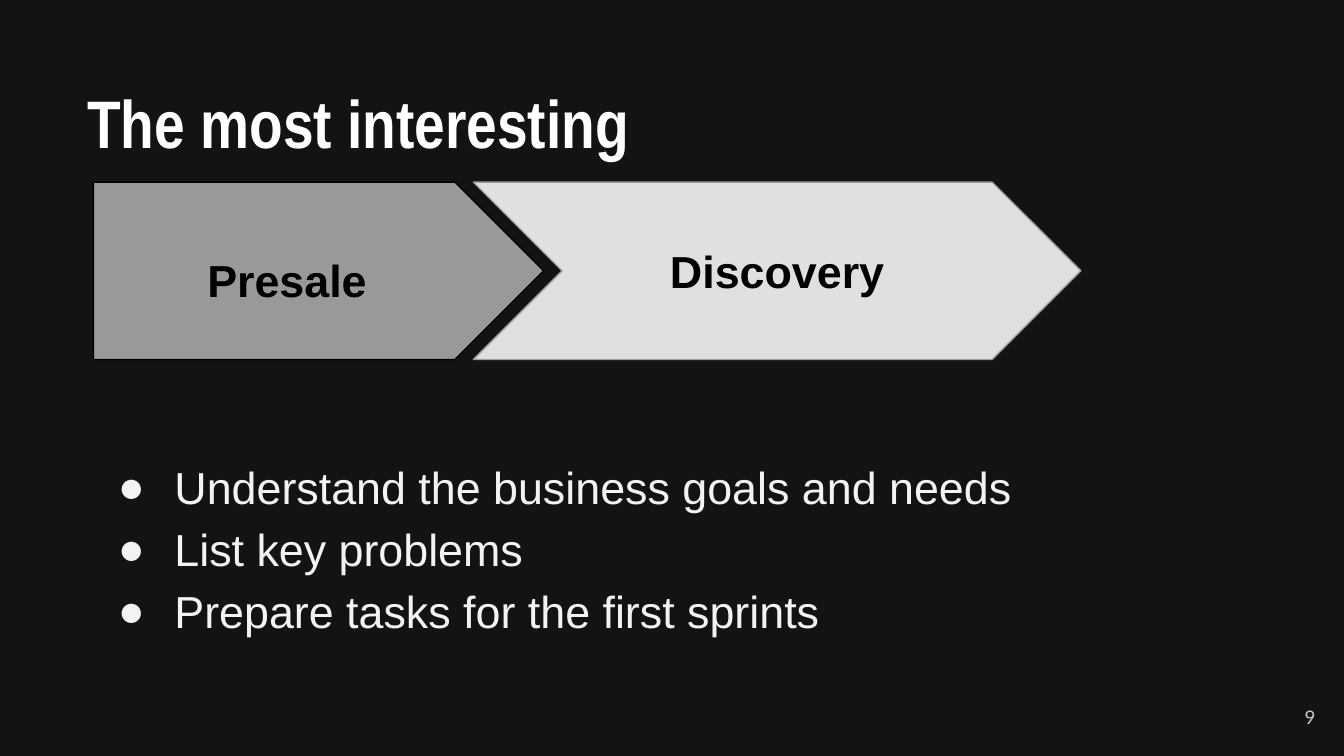
from dataclasses import dataclass

from lxml.etree import SubElement
from pptx import Presentation
from pptx.dml.color import RGBColor
from pptx.enum.shapes import MSO_SHAPE as Shape
from pptx.enum.text import MSO_ANCHOR as Anchor, MSO_AUTO_SIZE as AutoSize, PP_ALIGN as Align
from pptx.oxml.ns import qn
from pptx.util import Inches, Pt

TITLE_ONLY = 5
CELL = 0.1  # inches per grid column and row
COLUMNS = 100
ROWS = COLUMNS * 9 / 16


@dataclass(frozen=True)
class Theme:
    background: str = "131313"
    title: str = "FFFFFF"
    body: str = "F3F3F3"
    page_number: str = "CACACA"
    stage_text: str = "000000"
    title_font: str = "Arial Narrow"
    body_font: str = "Arial"
    number_font: str = "Lato"
    title_size: int = 36
    body_size: int = 24
    number_size: int = 10


def color(value):
    return RGBColor.from_string(value)


def cells(*counts):
    return [Inches(count * CELL) for count in counts]


class SlideBuilder:
    def __init__(self, presentation, theme):
        self.theme = theme
        self.slide = presentation.slides.add_slide(presentation.slide_layouts[TITLE_ONLY])
        fill = self.slide.background.fill
        fill.solid()
        fill.fore_color.rgb = color(theme.background)

    def style_text(self, shape, font, size, text_color, align=Align.LEFT, bold=False):
        frame = shape.text_frame
        frame.word_wrap = True
        frame.auto_size = AutoSize.NONE
        frame.vertical_anchor = Anchor.MIDDLE
        frame.margin_left = frame.margin_right = Inches(0.1)
        frame.margin_top = frame.margin_bottom = Inches(0.1)
        for paragraph in frame.paragraphs:
            paragraph.alignment = align
            for run in paragraph.runs:
                run.font.name = font
                run.font.size = Pt(size)
                run.font.bold = bold
                run.font.color.rgb = color(text_color)

    def title(self, text, box):
        shape = self.slide.shapes.title
        shape.left, shape.top, shape.width, shape.height = cells(*box)
        shape.text_frame.text = text
        theme = self.theme
        self.style_text(shape, theme.title_font, theme.title_size, theme.title, bold=True)

    def stage(self, kind, text, box, fill, line):
        shape = self.slide.shapes.add_shape(kind, *cells(*box))
        shape.adjustments[0] = 0.5
        shape.shadow.inherit = False
        shape.fill.solid()
        shape.fill.fore_color.rgb = color(fill)
        shape.line.color.rgb = color(line)
        shape.line.width = Pt(0.75)
        shape.text_frame.text = text
        theme = self.theme
        self.style_text(shape, theme.body_font, theme.body_size, theme.stage_text,
                        Align.CENTER, bold=True)
        return shape

    def tall_space(self, shape):
        """End the label with a title-sized space, which lowers its baseline."""
        run = shape.text_frame.paragraphs[0].add_run()
        run.text = " "
        run.font.name = self.theme.body_font
        run.font.size = Pt(self.theme.title_size)
        run.font.bold = True
        run.font.color.rgb = color(self.theme.stage_text)

    def bullets(self, items, box):
        shape = self.slide.shapes.add_textbox(*cells(*box))
        shape.text_frame.text = "\n".join(items)
        theme = self.theme
        for paragraph in shape.text_frame.paragraphs:
            paragraph.line_spacing = 1.15
            properties = paragraph._p.get_or_add_pPr()
            properties.set("marL", str(Inches(0.5)))
            properties.set("indent", str(Inches(-0.42)))
            bullet_color = SubElement(properties, qn("a:buClr"))
            SubElement(bullet_color, qn("a:srgbClr"), val=theme.body)
            SubElement(properties, qn("a:buFont"), typeface=theme.body_font)
            SubElement(properties, qn("a:buChar"), char="●")
        self.style_text(shape, theme.body_font, theme.body_size, theme.body)

    def page_number(self, text, box):
        shape = self.slide.shapes.add_textbox(*cells(*box))
        shape.text_frame.text = text
        theme = self.theme
        self.style_text(shape, theme.number_font, theme.number_size, theme.page_number,
                        Align.RIGHT)


def main():
    presentation = Presentation()
    presentation.slide_width, presentation.slide_height = cells(COLUMNS, ROWS)
    builder = SlideBuilder(presentation, Theme())

    # Heading
    builder.title("The most interesting", (5.5, 4.35, 85.9, 9.4))

    # Process stages, on one row
    top, height = 13.55, 13.2
    presale = builder.stage(Shape.PENTAGON, "Presale", (6.95, top, 33.5, height),
                            fill="999999", line="000000")
    builder.tall_space(presale)
    builder.stage(Shape.CHEVRON, "Discovery", (35.22, top, 45.2, height),
                  fill="E0E0E0", line="9E9E9E")

    # Goals of the stages
    builder.bullets(["Understand the business goals and needs",
                     "List key problems",
                     "Prepare tasks for the first sprints"], (7, 31.24, 76.3, 18.6))

    # Footer
    builder.page_number("9", (92.86, 51.2, 6, 4.3))
    presentation.save("out.pptx")


if __name__ == "__main__":
    main()
